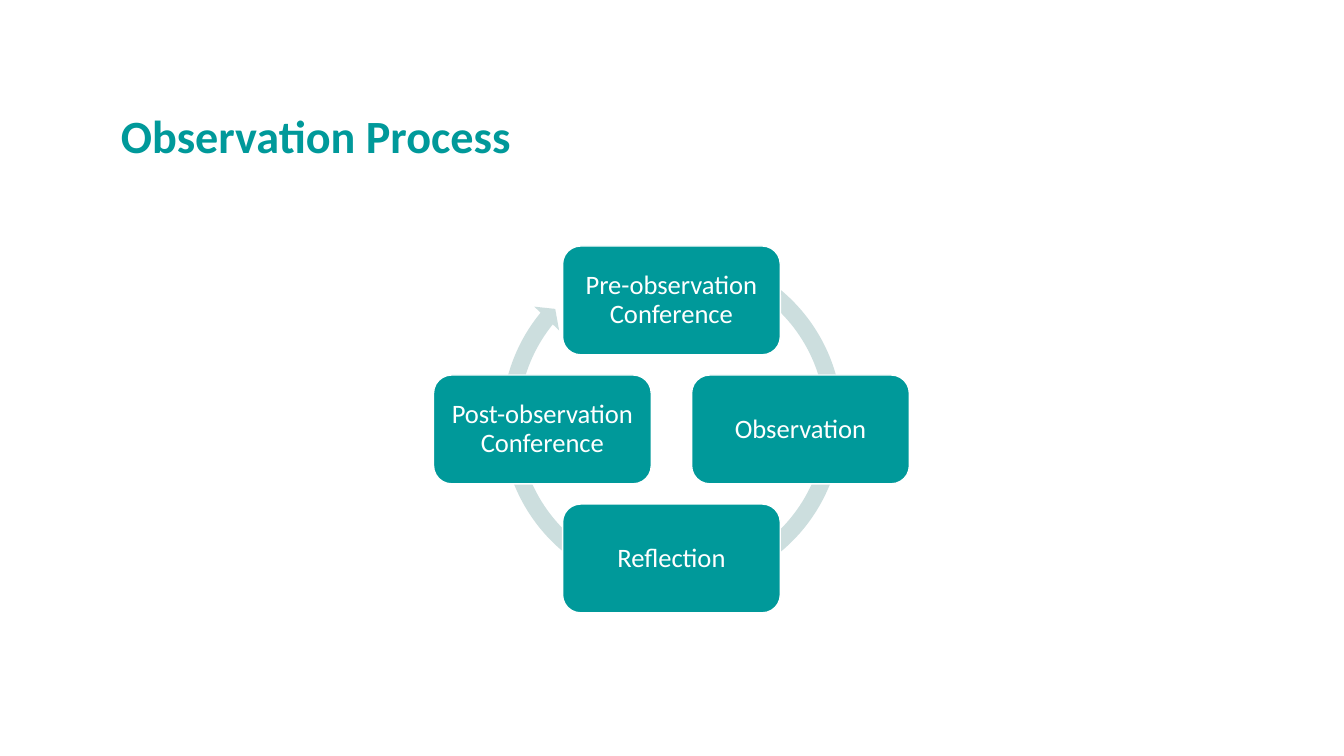
from dataclasses import dataclass

from pptx import Presentation
from pptx.dml.color import RGBColor
from pptx.enum.shapes import MSO_SHAPE
from pptx.enum.text import MSO_ANCHOR, MSO_AUTO_SIZE, PP_ALIGN
from pptx.shapes.autoshape import Shape
from pptx.slide import Slide
from pptx.text.text import TextFrame
from pptx.util import Inches, Pt

TEAL = "00999A"
PALE_TEAL = "CCDEDE"
WHITE = "FFFFFF"
FONT = "Calibri"

CENTER_X, CENTER_Y = 6.66, 4.26
ORBIT = 1.28
STEP_WIDTH, STEP_HEIGHT = 2.16, 1.08
CYCLE_SIZE = 3.55
CYCLE_LEFT, CYCLE_TOP = 4.89, 2.4
CYCLE_ADJUSTMENTS = (0.047, 2.729, 131.541, 178.149, 0.048)


@dataclass(frozen=True)
class Step:
    label: str
    across: int
    down: int


STEPS = (
    Step("Pre-observation Conference", 0, -1),
    Step("Observation", 1, 0),
    Step("Reflection", 0, 1),
    Step("Post-observation Conference", -1, 0),
)


def color(value: str) -> RGBColor:
    return RGBColor.from_string(value)


def fill_shape(shape: Shape, value: str) -> None:
    shape.shadow.inherit = False
    shape.fill.solid()
    shape.fill.fore_color.rgb = color(value)


def write(frame: TextFrame, text: str, size: float, value: str, bold: bool,
          align: PP_ALIGN, spacing: float, anchor: MSO_ANCHOR, inset: float) -> None:
    frame.word_wrap = True
    frame.auto_size = MSO_AUTO_SIZE.NONE
    frame.vertical_anchor = anchor
    frame.margin_left = frame.margin_right = Inches(inset)
    frame.margin_top = frame.margin_bottom = Inches(inset)
    paragraph = frame.paragraphs[0]
    paragraph.alignment = align
    paragraph.line_spacing = spacing
    run = paragraph.add_run()
    run.text = text
    run.font.name = FONT
    run.font.size = Pt(size)
    run.font.bold = bold
    run.font.color.rgb = color(value)


def draw_title(slide: Slide, text: str) -> None:
    title = slide.shapes.title
    title.left, title.top = Inches(1.2), Inches(0.22)
    title.width, title.height = Inches(10.94), Inches(1.4)
    write(title.text_frame, text, 33, TEAL, True,
          PP_ALIGN.LEFT, 0.85, MSO_ANCHOR.BOTTOM, 0)


def draw_cycle(slide: Slide) -> None:
    cycle = slide.shapes.add_shape(
        MSO_SHAPE.CIRCULAR_ARROW, Inches(CYCLE_LEFT), Inches(CYCLE_TOP),
        Inches(CYCLE_SIZE), Inches(CYCLE_SIZE))
    fill_shape(cycle, PALE_TEAL)
    cycle.line.fill.background()
    for index, adjustment in enumerate(CYCLE_ADJUSTMENTS):
        cycle.adjustments[index] = adjustment


def draw_step(slide: Slide, step: Step) -> None:
    left = CENTER_X + step.across * ORBIT - STEP_WIDTH / 2
    top = CENTER_Y + step.down * ORBIT - STEP_HEIGHT / 2
    box = slide.shapes.add_shape(
        MSO_SHAPE.ROUNDED_RECTANGLE, Inches(left), Inches(top),
        Inches(STEP_WIDTH), Inches(STEP_HEIGHT))
    fill_shape(box, TEAL)
    box.line.color.rgb = color(WHITE)
    box.line.width = Pt(1)
    write(box.text_frame, step.label, 19, WHITE, False,
          PP_ALIGN.CENTER, 0.9, MSO_ANCHOR.MIDDLE, 0.08)


def main() -> None:
    presentation = Presentation()
    presentation.slide_width = Inches(13.33)
    presentation.slide_height = Inches(7.5)
    slide = presentation.slides.add_slide(presentation.slide_layouts[5])
    draw_title(slide, "Observation Process")
    draw_cycle(slide)
    for step in STEPS:
        draw_step(slide, step)
    presentation.save("out.pptx")


if __name__ == "__main__":
    main()
